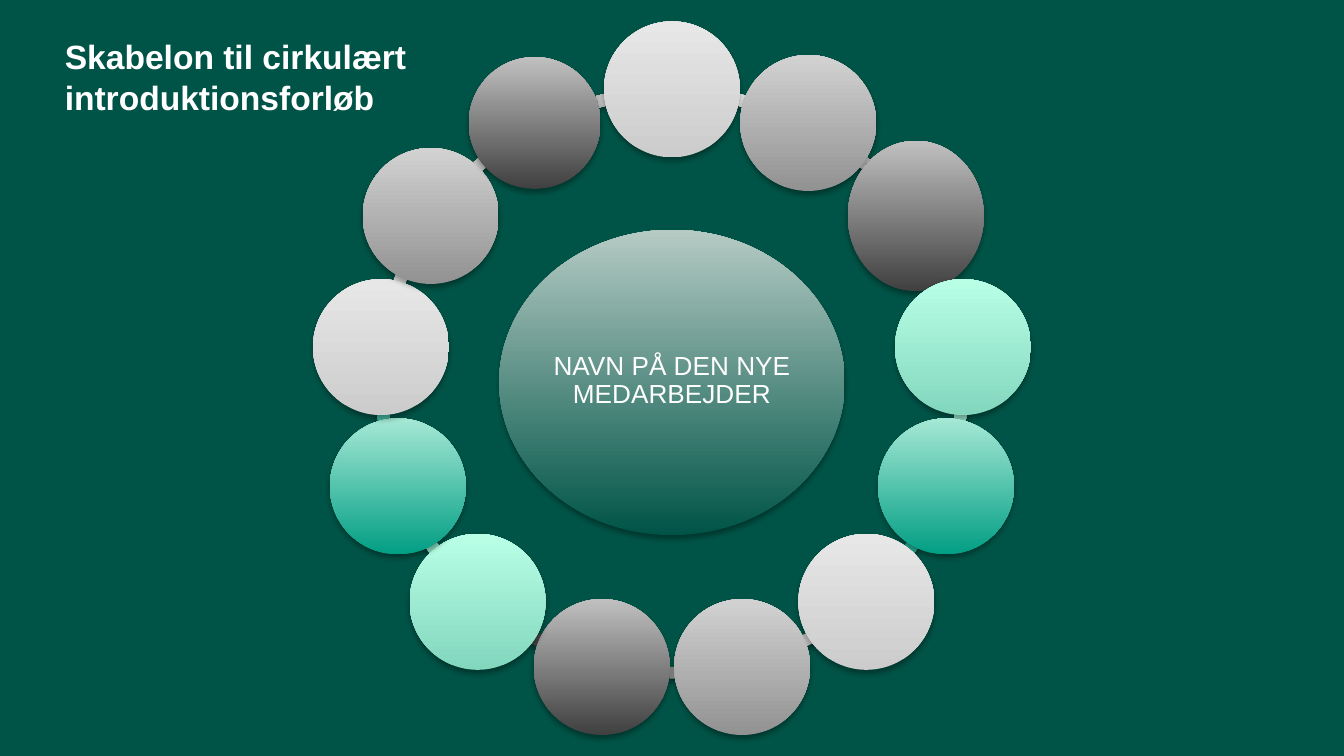
from math import cos, radians, sin

from lxml import etree
from pptx import Presentation
from pptx import util as u
from pptx.dml.color import RGBColor
from pptx.enum import shapes, text
from pptx.oxml.ns import qn

GREEN = RGBColor(0x00, 0x54, 0x47)
SAGE = RGBColor(0xB5, 0xCB, 0xC4)
WHITE = RGBColor(0xFF, 0xFF, 0xFF)
# Each step's gradient runs from its bottom colour to its top colour
STEP_COLORS = [
    (RGBColor(0xCC, 0xCC, 0xCC), RGBColor(0xE7, 0xE7, 0xE7)),
    (RGBColor(0x92, 0x92, 0x92), RGBColor(0xD2, 0xD2, 0xD2)),
    (RGBColor(0x40, 0x40, 0x40), RGBColor(0xC0, 0xC0, 0xC0)),
    (RGBColor(0x82, 0xD7, 0xBD), RGBColor(0xB9, 0xFF, 0xE7)),
    (RGBColor(0x02, 0x9E, 0x84), RGBColor(0xA5, 0xE8, 0xD5)),
]

STEPS = 13
TURN = 360 / STEPS
CENTER_X, CENTER_Y = 12.7, 7.23
ORBIT = 5.54
RING = 11.2
DOT = 2.57
# Hand-adjusted parts: arc (dx, dy, degrees) and dot (dx, width, height)
ARC_NUDGES = {1: (0.08, 0.03, -0.8), 2: (0, -0.1, 0.9)}
DOT_TWEAKS = {2: (0.05, DOT, 2.84), 12: (-0.02, 2.49, 2.49)}


def add_part(preset, x, y, width, height, colors):
    """Add a shaded, shadowed shape centred on x, y (in cm)."""
    part = slide.shapes.add_shape(
        preset, u.Cm(x - width / 2), u.Cm(y - height / 2), u.Cm(width), u.Cm(height))
    part.fill.gradient()
    part.fill.gradient_angle = 90
    for stop, color in zip(part.fill.gradient_stops, colors):
        stop.color.rgb = color
    part.line.fill.background()
    part.shadow.inherit = False
    effects = part._element.spPr.find(qn("a:effectLst"))
    shadow = etree.SubElement(effects, qn("a:outerShdw"), blurRad="40000", dist="23000",
                              dir="5400000", rotWithShape="0")
    black = etree.SubElement(shadow, qn("a:srgbClr"), val="000000")
    etree.SubElement(black, qn("a:alpha"), val="35000")
    return part


def add_words(paragraph, words, size, bold):
    run = paragraph.add_run()
    run.text = words
    run.font.name = "Arial"
    run.font.size = u.Pt(size)
    run.font.bold = bold
    run.font.color.rgb = WHITE


prs = Presentation()
prs.slide_width, prs.slide_height = u.Cm(25.4), u.Cm(14.29)
slide = prs.slides.add_slide(prs.slide_layouts[5])
slide.background.fill.solid()
slide.background.fill.fore_color.rgb = GREEN

# Ring of arcs, last one first so that each overlaps the next
for step in reversed(range(STEPS)):
    dx, dy, twist = ARC_NUDGES.get(step, (0, 0, 0))
    arc = add_part(shapes.MSO_SHAPE.BLOCK_ARC, CENTER_X + dx, CENTER_Y + dy,
                   RING, RING, STEP_COLORS[step % len(STEP_COLORS)])
    start = 270 + step * TURN + twist
    # Angles are stored in 60000ths of a degree, adjustments in 100000ths
    arc.adjustments[0] = start % 360 * 0.6
    arc.adjustments[1] = (start + TURN) % 360 * 0.6
    arc.adjustments[2] = 0.02

# Employee in the middle
add_part(shapes.MSO_SHAPE.OVAL, CENTER_X, 7.23, 6.53, 5.77, (GREEN, SAGE))
employee = slide.shapes.add_textbox(u.Cm(10.39), u.Cm(5.18), u.Cm(4.62), u.Cm(4.06)).text_frame
employee.word_wrap = True
employee.vertical_anchor = text.MSO_ANCHOR.MIDDLE
employee.margin_left = employee.margin_right = u.Cm(0.05)
employee.margin_top = employee.margin_bottom = u.Cm(0.05)
employee.paragraphs[0].alignment = text.PP_ALIGN.CENTER
employee.paragraphs[0].line_spacing = 0.9
add_words(employee.paragraphs[0], "NAVN PÅ DEN NYE MEDARBEJDER", 14, False)

# Step circles, clockwise from the top
for step in range(STEPS):
    dx, width, height = DOT_TWEAKS.get(step, (0, DOT, DOT))
    angle = radians(step * TURN)
    add_part(shapes.MSO_SHAPE.OVAL, CENTER_X + ORBIT * sin(angle) + dx,
             CENTER_Y - ORBIT * cos(angle), width, height,
             STEP_COLORS[step % len(STEP_COLORS)])

# Title
title = slide.shapes.title
title.left, title.top, title.width, title.height = u.Cm(0.97), u.Cm(0.56), u.Cm(12.7), u.Cm(1.8)
title.text_frame.word_wrap = True
title.text_frame.auto_size = text.MSO_AUTO_SIZE.SHAPE_TO_FIT_TEXT
title.text_frame.vertical_anchor = text.MSO_ANCHOR.TOP
title.text_frame.paragraphs[0].alignment = text.PP_ALIGN.LEFT
add_words(title.text_frame.paragraphs[0], "Skabelon til cirkulært introduktionsforløb", 18, True)

prs.save("out.pptx")
